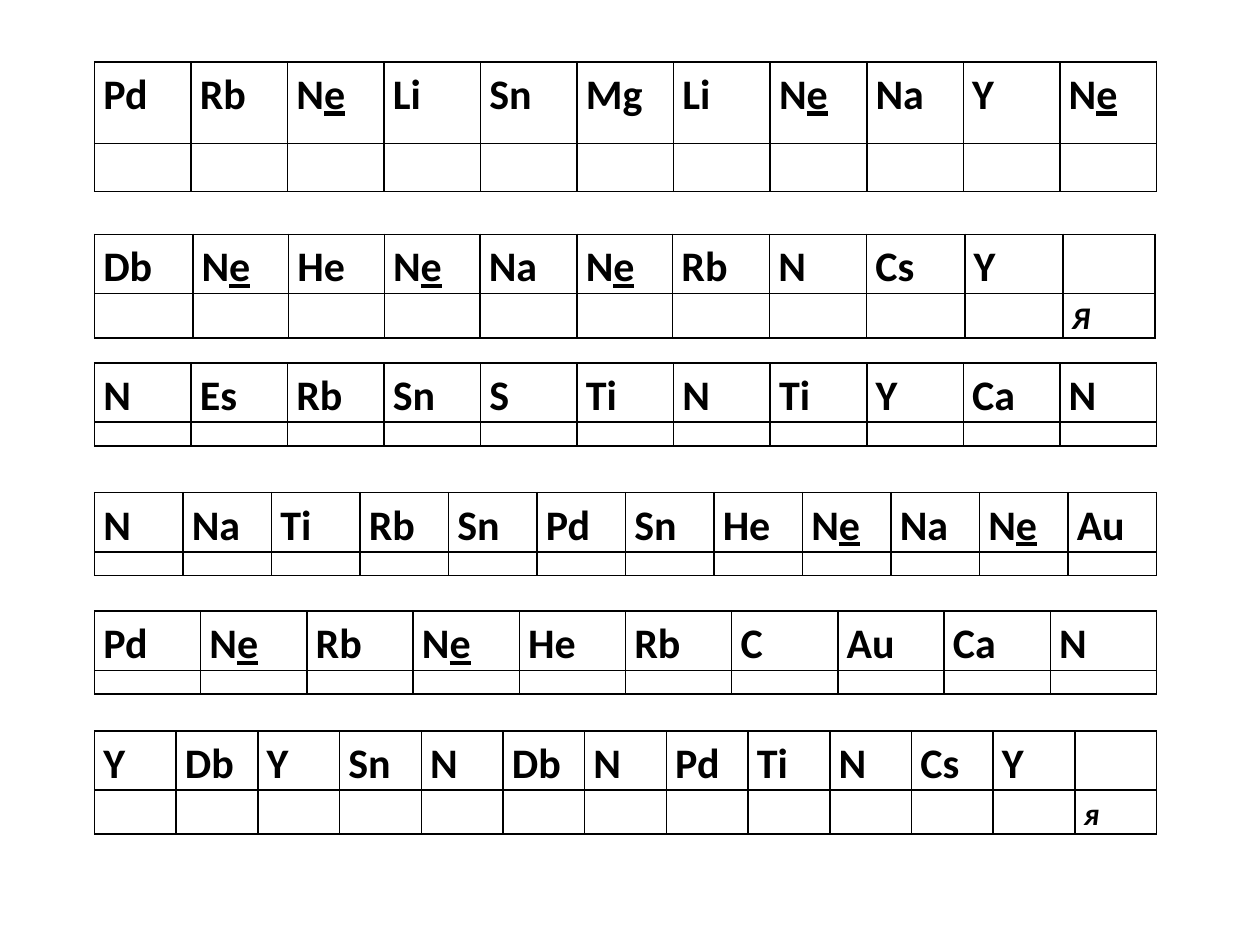
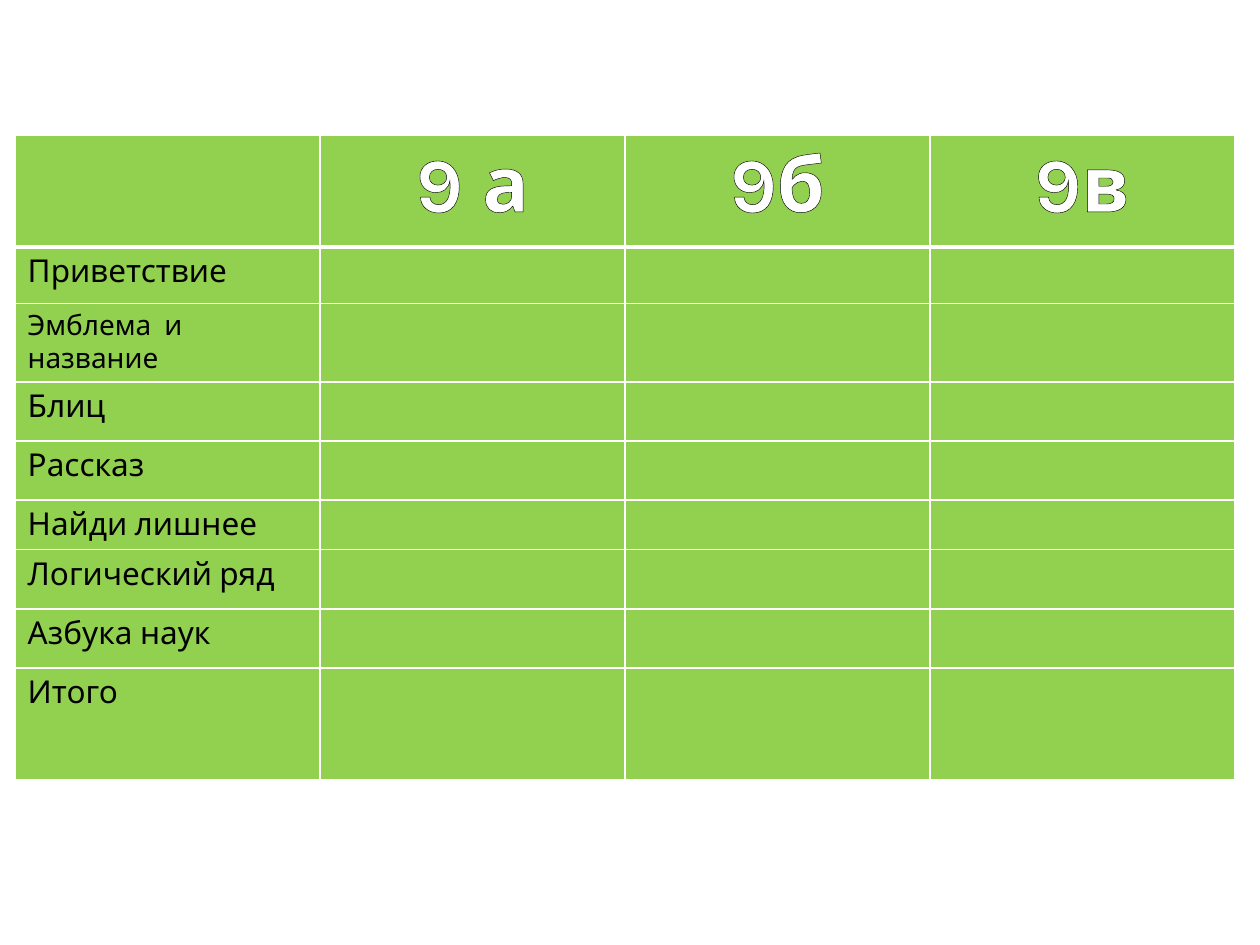
from lxml import etree
from pptx import Presentation
from pptx import util as u
from pptx.dml.color import RGBColor
from pptx.enum import text
from pptx.oxml import ns

hues = {"ink": "000000", "paper": "FFFFFF", "grass": "92D050"}


def frame(cell, hue, fill=None, top=1, base=1):
    if fill:
        cell.fill.solid()
        cell.fill.fore_color.rgb = RGBColor.from_string(hues[fill])
    else:
        cell.fill.background()
    props = cell._tc.get_or_add_tcPr()
    for spot, (side, width) in enumerate(zip("LRTB", (1, 1, top, base))):
        line = etree.Element(ns.qn("a:ln" + side), w=str(u.Pt(width)))
        solid = etree.SubElement(line, ns.qn("a:solidFill"))
        etree.SubElement(solid, ns.qn("a:srgbClr"), val=hues[hue])
        props.insert(spot, line)


def write(cell, parts, size, face, hue="ink", bold=False, blank=9):
    para = cell.text_frame.paragraphs[0]
    if not parts:
        etree.SubElement(para._p, ns.qn("a:endParaRPr"), sz=str(blank * 100))
    for part, under in parts:
        run = para.add_run()
        run.text = part
        run.font.size = u.Pt(size)
        run.font.name = face
        run.font.bold = bold
        run.font.underline = under
        run.font.color.rgb = RGBColor.from_string(hues[hue])
    return para


deck = Presentation()
deck.slide_width = u.Inches(10)
deck.slide_height = u.Inches(7.5)
blank = deck.slide_layouts[6]

page = deck.slides.add_slide(blank)
wide = 8.43
uneven = [0.78, 0.76, 0.76, 0.76, 0.77, 0.76, 0.77, 0.77, 0.78, 0.78, 0.73]
codes = [
    (0.49, 0.65, 0.38, "Pd Rb Ne Li Sn Mg Li Ne Na Y Ne", "", None),
    (1.86, 0.47, 0.35, "Db Ne He Ne Na Ne Rb N Cs Y", "Я", uneven),
    (2.88, 0.47, 0.19, "N Es Rb Sn S Ti N Ti Y Ca N", "", None),
    (3.91, 0.47, 0.19, "N Na Ti Rb Sn Pd Sn He Ne Na Ne Au", "", None),
    (4.85, 0.47, 0.19, "Pd Ne Rb Ne He Rb С Au Ca N", "", None),
    (5.8, 0.47, 0.35, "Y Db Y Sn N Db N Pd Ti N Cs Y", "я", None),
]
for top, high, low, signs, tail, widths in codes:
    signs = signs.split()
    count = len(signs) + len(tail)
    grid = page.shapes.add_table(2, count, u.Inches(0.75), u.Inches(top),
                                 u.Inches(wide), u.Inches(high + low)).table
    grid.first_row = grid.horz_banding = False
    grid.rows[0].height = u.Inches(high)
    grid.rows[1].height = u.Inches(low)
    for col, width in zip(grid.columns, widths or [wide / count] * count):
        col.width = u.Inches(width)
    for cell in grid.iter_cells():
        frame(cell, "ink")
        cell.margin_left = cell.margin_right = u.Inches(0.07)
        cell.margin_top = cell.margin_bottom = 0
    for spot in range(count):
        sign = signs[spot] if spot < len(signs) else ""
        parts = [("N", False), ("e", True)] if sign == "Ne" else [(sign, False)]
        para = write(grid.cell(0, spot), parts if sign else [], 24, "Calibri", bold=True)
        para.line_spacing = 1.15
        last = tail if spot == len(signs) else ""
        para = write(grid.cell(1, spot), [(last, False)] if last else [], 18, "Calibri", bold=True)
        if last:
            para.line_spacing = 1.15
            para.runs[0].font.italic = True

page = deck.slides.add_slide(blank)
teams = ["", "9 а", "9б", "9в"]
rounds = [
    ("", 0.89), ("Приветствие", 0.45), ("Эмблема  и название", 0.62),
    ("Блиц", 0.47), ("Рассказ", 0.47), ("Найди лишнее", 0.39),
    ("Логический ряд", 0.47), ("Азбука наук", 0.47), ("Итого", 0.89),
]
grid = page.shapes.add_table(len(rounds), len(teams), u.Inches(0.12), u.Inches(1.07),
                             u.Inches(9.68), u.Inches(sum(h for _, h in rounds))).table
grid.first_row = grid.horz_banding = False
for col in grid.columns:
    col.width = u.Inches(2.42)
for row, (name, high) in enumerate(rounds):
    grid.rows[row].height = u.Inches(high)
    for col, team in enumerate(teams):
        cell = grid.cell(row, col)
        frame(cell, "paper", "grass", 3 if row == 1 else 1, 3 if row == 0 else 1)
        if row == 0 and team:
            para = write(cell, [(team, False)], 44, "Karla", "paper", True)
            para.alignment = text.PP_ALIGN.CENTER
            line = etree.Element(ns.qn("a:ln"), w=str(u.Pt(0.75)))
            solid = etree.SubElement(line, ns.qn("a:solidFill"))
            etree.SubElement(solid, ns.qn("a:srgbClr"), val=hues["ink"])
            para.runs[0].font._element.insert(0, line)
        else:
            label = name if col == 0 else ""
            write(cell, [(label, False)] if label else [], 16 if row == 2 else 18, "Karla")

deck.save("out.pptx")
